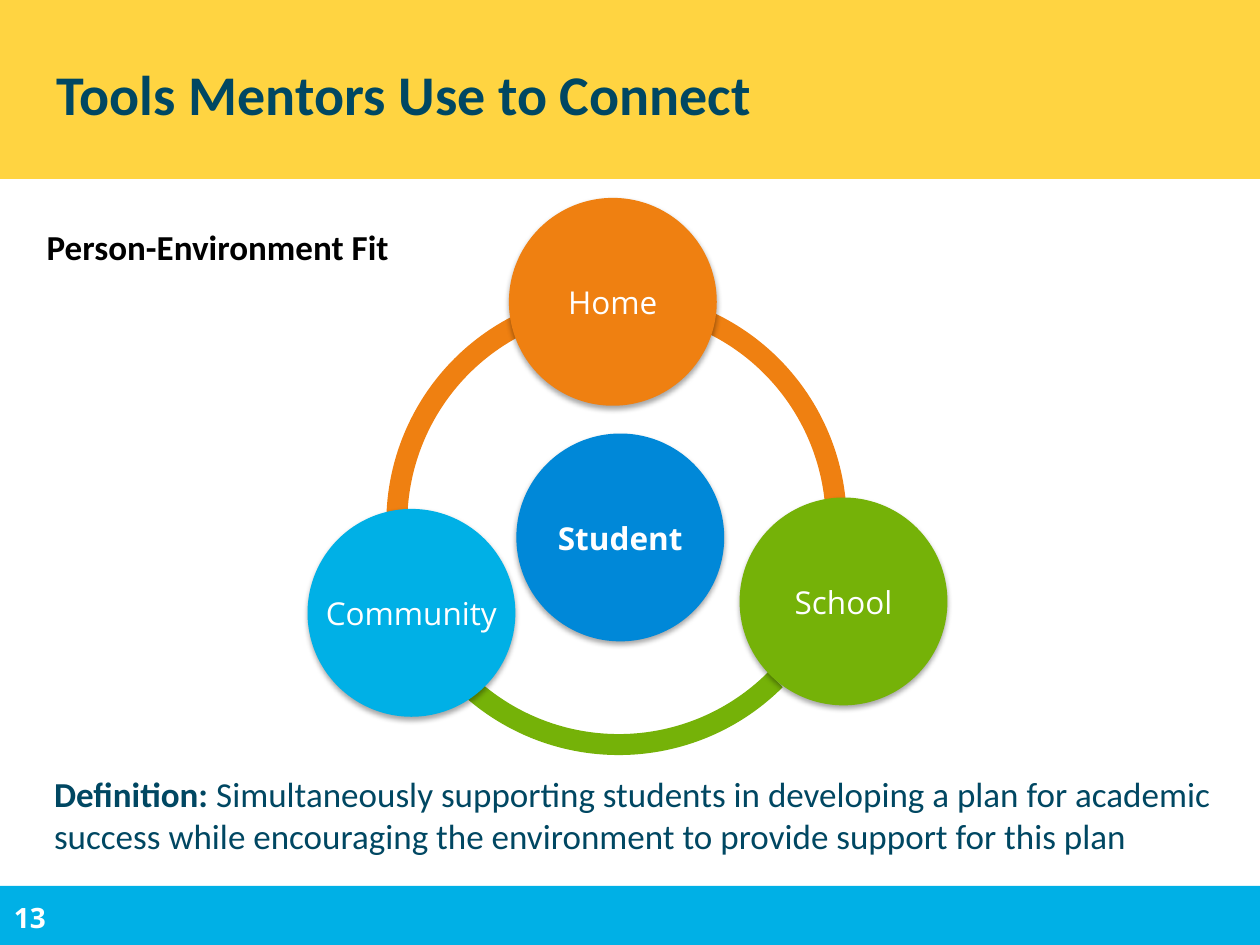
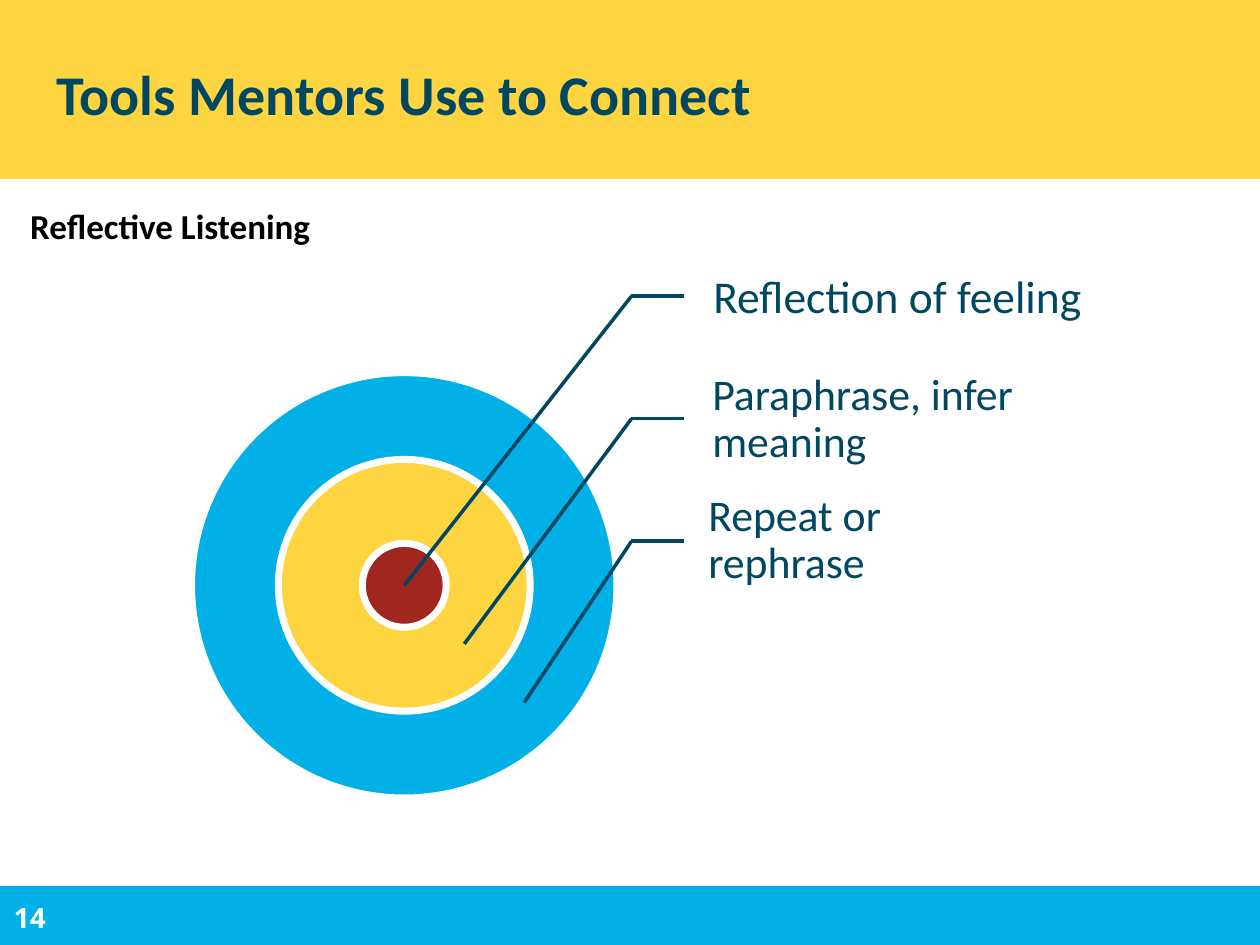
from lxml import etree
from pptx import Presentation
from pptx.dml.color import RGBColor
from pptx.enum import shapes, text
from pptx.oxml import ns
from pptx.util import Cm, Pt

COLORS = {
    "yellow": "FFD441", "sky": "00B0E6", "blue": "0088D8", "green": "75B208",
    "orange": "EF8011", "red": "9F271F", "navy": "004762",
    "white": "FFFFFF", "black": "000000",
}
HEADING = "Tools Mentors Use to Connect"
SLIDE_W, SLIDE_H = 25.4, 19.05
FOOTER_TOP = 17.86
SHAPE = shapes.MSO_SHAPE


def rgb(name):
    return RGBColor.from_string(COLORS[name])


def write(frame, *runs, size=20, font="Calibri", color="navy", bold=False,
          align=text.PP_ALIGN.LEFT, anchor=text.MSO_ANCHOR.TOP, wrap=True,
          spacing=None, insets=None):
    """Fill a frame with one paragraph; a run is a string or (string, bold)."""
    frame.word_wrap = wrap
    frame.auto_size = text.MSO_AUTO_SIZE.NONE
    frame.vertical_anchor = anchor
    if insets:
        (frame.margin_left, frame.margin_top,
         frame.margin_right, frame.margin_bottom) = map(Cm, insets)
    paragraph = frame.paragraphs[0]
    paragraph.alignment = align
    if spacing:
        paragraph.line_spacing = spacing
    for item in runs:
        words, run_bold = (item, bold) if isinstance(item, str) else item
        run = paragraph.add_run()
        run.text = words
        run.font.size, run.font.name, run.font.bold = Pt(size), font, run_bold
        run.font.color.rgb = rgb(color)


def add_text(slide, left, top, width, height, *runs, **style):
    box = slide.shapes.add_textbox(Cm(left), Cm(top), Cm(width), Cm(height))
    write(box.text_frame, *runs, **style)


def add_figure(slide, kind, left, top, width, height, fill=None, line=None, weight=1):
    figure = slide.shapes.add_shape(kind, Cm(left), Cm(top), Cm(width), Cm(height))
    figure.shadow.inherit = False
    if fill:
        figure.fill.solid()
        figure.fill.fore_color.rgb = rgb(fill)
    else:
        figure.fill.background()
    if line:
        figure.line.color.rgb = rgb(line)
        figure.line.width = Pt(weight)
    else:
        figure.line.fill.background()
    return figure


def add_soft_shadow(figure):
    effects = figure.element.spPr.find(ns.qn("a:effectLst"))
    shadow = etree.SubElement(
        effects, ns.qn("a:outerShdw"), blurRad=str(Pt(3.1)), dist=str(Pt(1.8)),
        dir="5400000", rotWithShape="0")
    shade = etree.SubElement(shadow, ns.qn("a:srgbClr"), val=COLORS["black"])
    etree.SubElement(shade, ns.qn("a:alpha"), val="35000")


def add_circle(slide, label, left, top, fill, **style):
    circle = add_figure(slide, SHAPE.OVAL, left, top, 4.19, 4.19, fill)
    add_soft_shadow(circle)
    write(circle.text_frame, label, size=18, font="Open Sans", color="white",
          align=text.PP_ALIGN.CENTER, anchor=text.MSO_ANCHOR.MIDDLE, **style)


def add_line(slide, start, end):
    line = slide.shapes.add_connector(
        shapes.MSO_CONNECTOR.STRAIGHT, *map(Cm, (*start, *end)))
    line.line.color.rgb = rgb("navy")
    line.line.width = Pt(2)
    etree.SubElement(line.element.spPr, ns.qn("a:effectLst"))


def add_base_slide(prs, number):
    """Title, bands and page number shared by all slides."""
    slide = prs.slides.add_slide(prs.slide_layouts[5])
    title = slide.shapes.title
    title.left, title.top, title.width, title.height = map(Cm, (0.89, 0.28, 24.13, 3.18))
    write(title.text_frame, HEADING, size=32, bold=True, anchor=text.MSO_ANCHOR.MIDDLE)
    for top, height, fill in ((0, 3.61, "yellow"),
                              (FOOTER_TOP, SLIDE_H - FOOTER_TOP, "sky")):
        band = add_figure(slide, SHAPE.RECTANGLE, 0, top, SLIDE_W, height, fill)
        title.element.addprevious(band.element)
    add_text(slide, 0.03, 18.03, 1.57, 1.02, str(number),
             size=16, font="Open Sans", color="white", bold=True)
    return slide


def add_fit_slide(prs):
    slide = add_base_slide(prs, 13)
    add_text(slide, 0.84, 15.44, 24.56, 1.96, ("Definition: ", True),
             "Simultaneously supporting students in developing a plan for academic "
             "success while encouraging the environment to provide support for this plan")

    # Ring of three quarter arcs
    for left, rotation, color in ((8, 135, "green"), (7.92, 0, "orange"),
                                  (8, 270, "orange")):
        arc = add_figure(slide, SHAPE.ARC, left, 6.07, 8.94, 8.94, line=color, weight=12)
        arc.rotation = rotation

    # Student and surroundings
    add_circle(slide, "Student", 10.41, 8.74, "blue", bold=True, wrap=False)
    add_circle(slide, "School", 14.91, 10.03, "green")
    add_circle(slide, "Home", 10.26, 3.99, "orange")
    add_circle(slide, "Community", 6.2, 10.26, "sky", wrap=False, insets=(0, 0, 0, 0))
    add_text(slide, 0.69, 4.42, 7.98, 1.12, "Person-Environment Fit",
             color="black", bold=True)


def add_listening_slide(prs):
    slide = add_base_slide(prs, 14)

    # Target: concentric rings with diameters 5 : 3 : 1
    center_x, center_y, outer = 8.15, 11.8, 8.46
    for share, fill, weight in ((5, "sky", 0.75), (3, "yellow", 4), (1, "red", 4)):
        size = outer * share / 5
        add_figure(slide, SHAPE.OVAL, center_x - size / 2, center_y - size / 2,
                   size, size, fill, "white", weight)

    # Callouts, from the center outwards
    elbow_x, end_x = 12.73, 13.79
    callouts = (("Reflection of feeling", 13.89, 8.13, 26),
                ("Paraphrase, infer meaning", 13.87, 7.92, 25),
                ("Repeat or rephrase", 13.79, 4.24, 25))
    for i, (label, left, width, size) in enumerate(callouts):
        elbow = (elbow_x, 5.97 + 2.47 * i)
        add_text(slide, left, 4.8 + 2.44 * i, width, 2.46, label, size=size,
                 anchor=text.MSO_ANCHOR.MIDDLE, spacing=0.9,
                 insets=(0.49, 0.09, 0.09, 0.09))
        add_line(slide, elbow, (end_x, elbow[1]))
        add_line(slide, elbow, (center_x + 1.21 * i, center_y + 1.18 * i))
    add_text(slide, 0.36, 3.99, 6.22, 1.12, "Reflective Listening",
             color="black", bold=True, wrap=False)


def main():
    prs = Presentation()
    prs.slide_width, prs.slide_height = Cm(SLIDE_W), Cm(SLIDE_H)
    add_fit_slide(prs)
    add_listening_slide(prs)
    prs.save("out.pptx")


if __name__ == "__main__":
    main()
